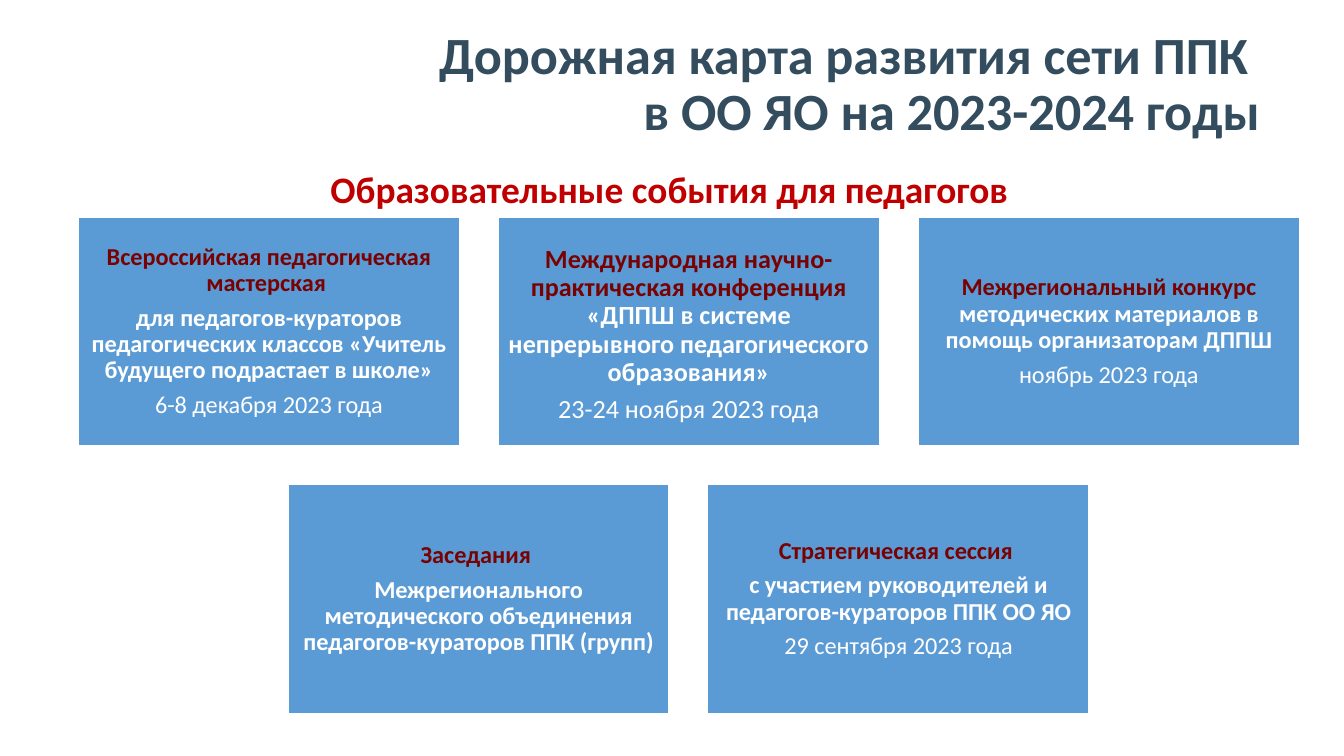
from dataclasses import dataclass

import pptx
import pptx.dml.color
import pptx.enum.shapes
import pptx.enum.text
import pptx.util

ALIGN = pptx.enum.text.PP_ALIGN
ANCHOR = pptx.enum.text.MSO_ANCHOR
EMU_PER_PX = 4572


@dataclass(frozen=True)
class Theme:
    font: str = "Calibri"
    title: str = "334D5E"
    heading: str = "C00000"
    card: str = "5B9BD5"
    accent: str = "780202"
    white: str = "FFFFFF"
    title_pt: int = 28
    heading_pt: int = 20
    card_pt: int = 13
    large_card_pt: int = 14
    space_ratio: float = 0.35


THEME = Theme()


@dataclass(frozen=True)
class Run:
    text: str
    color: str = THEME.white


@dataclass(frozen=True)
class Para:
    runs: tuple[Run, ...]
    bold: bool = True


@dataclass(frozen=True)
class Card:
    paras: tuple[Para, ...]
    size: int = THEME.card_pt
    inset: int = 10
    inset_top: int = 10


def accent(text: str) -> Run:
    return Run(text, THEME.accent)


def date(text: str) -> Para:
    return Para((Run(text),), bold=False)


SLIDE_W, SLIDE_H = 2000, 1125
CARD_W, CARD_H = 568, 341
GAP = 57
FIRST_LEFT, FIRST_TOP = 116, 323

ROWS = (
    (
        Card((
            Para((accent("Всероссийская педагогическая мастерская "),)),
            Para((Run("для педагогов-кураторов педагогических классов "
                      "«Учитель будущего подрастает в школе»"),)),
            date("6-8 декабря 2023 года"),
        )),
        Card((
            Para((accent("Международная научно-практическая конференция "),
                  Run("«ДППШ в системе непрерывного педагогического образования»"))),
            date("23-24 ноября 2023 года"),
        ), THEME.large_card_pt, 12, 22),
        Card((
            Para((accent("Межрегиональный конкурс "),
                  Run("методических материалов в помощь организаторам ДППШ"))),
            date("ноябрь 2023 года"),
        )),
    ),
    (
        Card((
            Para((accent("Заседания "),)),
            Para((Run("Межрегионального методического объединения "
                      "педагогов-кураторов ППК (групп)"),)),
        )),
        Card((
            Para((accent("Стратегическая сессия "),)),
            Para((Run("с участием руководителей и педагогов-кураторов ППК ОО ЯО"),)),
            date("29 сентября 2023 года"),
        )),
    ),
)


def px(n: int) -> pptx.util.Emu:
    return pptx.util.Emu(n * EMU_PER_PX)


def rgb(color: str) -> pptx.dml.color.RGBColor:
    return pptx.dml.color.RGBColor.from_string(color)


def write_para(p, para: Para, size: int) -> None:
    for run in para.runs:
        for i, line in enumerate(run.text.split("\n")):
            if i:
                p.add_line_break()
            p.add_run().text = line
    p.font.name = THEME.font
    p.font.size = pptx.util.Pt(size)
    p.font.bold = para.bold
    if len(para.runs) == 1:
        p.font.color.rgb = rgb(para.runs[0].color)
    else:
        for r, run in zip(p.runs, para.runs):
            r.font.color.rgb = rgb(run.color)


def add_text(s, box: tuple[int, int, int, int], run: Run, size: int,
             align: ALIGN, anchor: ANCHOR, spacing: float) -> None:
    tf = s.shapes.add_textbox(*map(px, box)).text_frame
    tf.word_wrap = True
    tf.vertical_anchor = anchor
    p = tf.paragraphs[0]
    p.alignment = align
    p.line_spacing = spacing
    write_para(p, Para((run,)), size)


def add_card(s, card: Card, left: int, top: int) -> None:
    sp = s.shapes.add_shape(pptx.enum.shapes.MSO_SHAPE.RECTANGLE,
                            px(left), px(top), px(CARD_W), px(CARD_H))
    sp.shadow.inherit = False
    sp.fill.solid()
    sp.fill.fore_color.rgb = rgb(THEME.card)
    sp.line.color.rgb = rgb(THEME.white)
    sp.line.width = pptx.util.Pt(1)
    tf = sp.text_frame
    tf.word_wrap = True
    tf.vertical_anchor = ANCHOR.MIDDLE
    tf.margin_left = tf.margin_right = tf.margin_bottom = px(card.inset)
    tf.margin_top = px(card.inset_top)
    for i, para in enumerate(card.paras):
        p = tf.add_paragraph() if i else tf.paragraphs[0]
        p.alignment = ALIGN.CENTER
        p.line_spacing = 0.9
        if i:
            p.space_before = pptx.util.Pt(THEME.space_ratio * card.size)
        write_para(p, para, card.size)


def main() -> None:
    prs = pptx.Presentation()
    prs.slide_width, prs.slide_height = px(SLIDE_W), px(SLIDE_H)
    s = prs.slides.add_slide(prs.slide_layouts[6])
    add_text(s, (400, 18, 1494, 218),
             Run("Дорожная карта развития сети ППК \nв ОО ЯО на 2023-2024 годы", THEME.title),
             THEME.title_pt, ALIGN.RIGHT, ANCHOR.MIDDLE, 0.9)
    add_text(s, (472, 237, 1424, 88),
             Run("Образовательные события для педагогов", THEME.heading),
             THEME.heading_pt, ALIGN.LEFT, ANCHOR.TOP, 1.0)
    for i, row in enumerate(ROWS):
        left = FIRST_LEFT + (len(ROWS[0]) - len(row)) * (CARD_W + GAP) // 2
        for j, card in enumerate(row):
            add_card(s, card, left + j * (CARD_W + GAP), FIRST_TOP + i * (CARD_H + GAP))
    prs.save("out.pptx")


if __name__ == "__main__":
    main()
